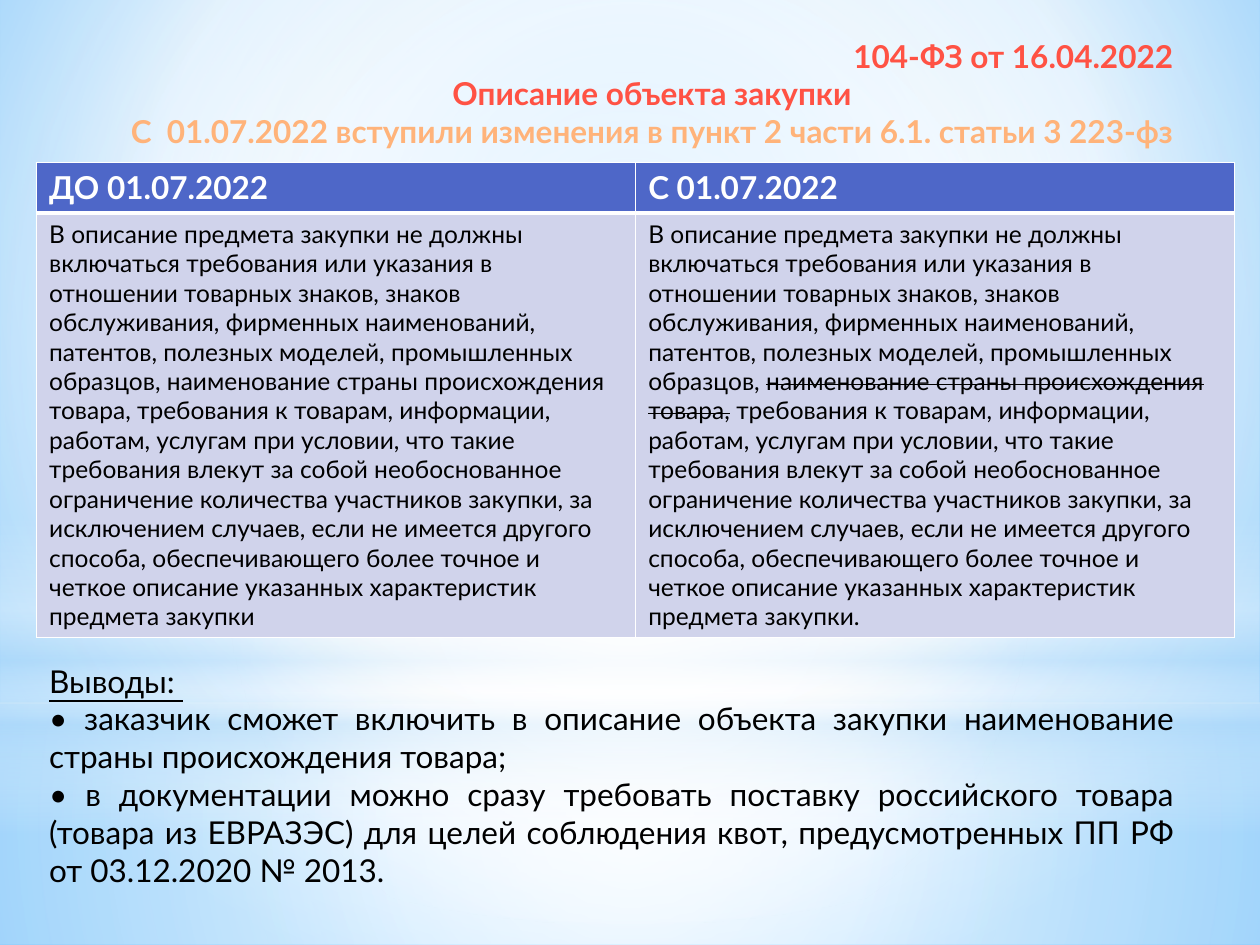
from dataclasses import dataclass

import pptx
import pptx.dml.color
import pptx.enum.shapes
import pptx.enum.text
import pptx.oxml
import pptx.oxml.ns
import pptx.util
from lxml import etree

Inches = pptx.util.Inches
Pt = pptx.util.Pt
qn = pptx.oxml.ns.qn
Align = pptx.enum.text.PP_ALIGN
Preset = pptx.enum.shapes.MSO_SHAPE

FONT = "Lato"
RED, ORANGE, BLACK, WHITE = "FF5244", "FFB37A", "000000", "FFFFFF"
HEADER_BLUE, CELL_LILAC, SKY = "4E67C8", "D0D3EB", "B4DCFA"


@dataclass
class Run:
    text: str
    color: str = BLACK
    size: int = 18
    bold: bool = False
    underline: bool = False
    strike: bool = False


@dataclass
class Line:
    run: Run
    align: Align
    margin: float = 0


@dataclass
class Gradient:
    """Stops are (position %, colour, opacity %); no focus means top to bottom."""
    stops: list[tuple[int, str, int]]
    focus: tuple[int, int, int, int] | None = (50, 50, 50, 50)


@dataclass
class Glow:
    preset: Preset
    top: float
    height: float
    gradient: Gradient


BACKDROP = Gradient([(0, "9ED5FF", 100), (60, WHITE, 100), (100, "5BB9FF", 100)],
                    (20, 10, 20, 60))
GLOWS = [
    Glow(Preset.RECTANGLE, 5.58, 1.92,
         Gradient([(0, WHITE, 91), (37, WHITE, 76), (100, SKY, 79)])),
    Glow(Preset.RECTANGLE, 0, 5.58,
         Gradient([(0, WHITE, 89), (48, WHITE, 62), (100, SKY, 79)])),
    Glow(Preset.RECTANGLE, 4.12, 2.5,
         Gradient([(0, WHITE, 0), (29, WHITE, 30), (45, SKY, 40),
                   (55, WHITE, 26), (65, SKY, 60), (100, WHITE, 0)], None)),
    Glow(Preset.OVAL, 1.75, 5.58, Gradient([(0, WHITE, 100), (56, WHITE, 0)])),
]

HEADING = [
    Line(Run("104-ФЗ от 16.04.2022", RED, bold=True), Align.RIGHT),
    Line(Run("Описание объекта закупки", RED, bold=True), Align.CENTER, margin=0.57),
    Line(Run("С  01.07.2022 вступили изменения в пункт 2 части 6.1. статьи 3 223-фз",
             ORANGE, bold=True), Align.RIGHT),
]
CONCLUSIONS = [
    Line(Run("Выводы: ", underline=True), Align.JUSTIFY),
    Line(Run("• заказчик сможет включить в описание объекта закупки наименование "
             "страны происхождения товара; "), Align.JUSTIFY),
    Line(Run("• в документации можно сразу требовать поставку российского товара "
             "(товара из ЕВРАЗЭС) для целей соблюдения квот, предусмотренных ПП РФ "
             "от 03.12.2020 № 2013."), Align.JUSTIFY),
]

RULE_START = (
    "В описание предмета закупки не должны включаться требования или указания в "
    "отношении товарных знаков, знаков обслуживания, фирменных наименований, "
    "патентов, полезных моделей, промышленных образцов, ")
ORIGIN_COUNTRY = "наименование страны происхождения товара,"
RULE_END = (
    " требования к товарам, информации, работам, услугам при условии, что такие "
    "требования влекут за собой необоснованное ограничение количества участников "
    "закупки, за исключением случаев, если не имеется другого способа, "
    "обеспечивающего более точное и четкое описание указанных характеристик "
    "предмета закупки")
COMPARISON = [
    [[Run("ДО 01.07.2022", WHITE, bold=True)],
     [Run("С 01.07.2022", WHITE, bold=True)]],
    [[Run(RULE_START + ORIGIN_COUNTRY + RULE_END, size=14)],
     [Run(RULE_START, size=14), Run(ORIGIN_COUNTRY, size=14, strike=True),
      Run(RULE_END + ".", size=14)]],
]
ROW_HEIGHTS = [0.39, 3.37]
ROW_FILLS = [HEADER_BLUE, CELL_LILAC]


def rgb(color: str) -> pptx.dml.color.RGBColor:
    return pptx.dml.color.RGBColor.from_string(color)


def apply_gradient(properties, gradient: Gradient) -> None:
    """Replace the solid fill among the properties with a gradient."""
    fill = etree.Element(qn("a:gradFill"), rotWithShape="1")
    stops = etree.SubElement(fill, qn("a:gsLst"))
    for position, color, opacity in gradient.stops:
        stop = etree.SubElement(stops, qn("a:gs"), pos=str(position * 1000))
        tint = etree.SubElement(stop, qn("a:srgbClr"), val=color)
        etree.SubElement(tint, qn("a:alpha"), val=str(opacity * 1000))
    if gradient.focus:
        circle = etree.SubElement(fill, qn("a:path"))
        circle.set("path", "circle")
        sides = {side: str(inset * 1000) for side, inset in zip("ltrb", gradient.focus)}
        etree.SubElement(circle, qn("a:fillToRect"), sides)
    else:
        etree.SubElement(fill, qn("a:lin"), ang="5400000", scaled="0")
    properties.replace(properties.find(qn("a:solidFill")), fill)


def draw_glow(slide, glow: Glow, depth: int) -> None:
    shape = slide.shapes.add_shape(
        glow.preset, 0, Inches(glow.top), Inches(10), Inches(glow.height))
    shape.shadow.inherit = False
    shape.line.fill.background()
    shape.fill.solid()
    apply_gradient(shape.element.spPr, glow.gradient)
    slide.shapes.element.insert(2 + depth, shape.element)


def add_run(paragraph, content: Run) -> None:
    run = paragraph.add_run()
    run.text = content.text
    run.font.name = FONT
    run.font.size = Pt(content.size)
    run.font.bold = content.bold
    run.font.underline = content.underline
    run.font.color.rgb = rgb(content.color)
    if content.strike:
        run.font._element.set("strike", "sngStrike")


def fill_placeholder(holder, lines: list[Line], left: float, top: float,
                     width: float, height: float) -> None:
    holder.left, holder.top = Inches(left), Inches(top)
    holder.width, holder.height = Inches(width), Inches(height)
    frame = holder.text_frame
    frame.auto_size = pptx.enum.text.MSO_AUTO_SIZE.NONE
    frame.vertical_anchor = pptx.enum.text.MSO_ANCHOR.TOP
    frame.word_wrap = True
    for index, line in enumerate(lines):
        paragraph = frame.add_paragraph() if index else frame.paragraphs[0]
        paragraph.alignment = line.align
        paragraph.space_before = Pt(0)
        properties = paragraph._p.get_or_add_pPr()
        properties.set("marL", str(Inches(line.margin)))
        properties.set("indent", "0")
        etree.SubElement(properties, qn("a:buNone"))
        add_run(paragraph, line.run)


def format_cell(cell, runs: list[Run], fill: str, bottom_width: int) -> None:
    properties = cell._tc.get_or_add_tcPr()
    for side, points in (("L", 1), ("R", 1), ("T", 1), ("B", bottom_width)):
        border = etree.SubElement(properties, qn(f"a:ln{side}"), w=str(Pt(points)))
        solid = etree.SubElement(border, qn("a:solidFill"))
        etree.SubElement(solid, qn("a:srgbClr"), val=WHITE)
    cell.fill.solid()
    cell.fill.fore_color.rgb = rgb(fill)
    for run in runs:
        add_run(cell.text_frame.paragraphs[0], run)


def draw_comparison(slide) -> None:
    table = slide.shapes.add_table(
        2, 2, Inches(0.29), Inches(1.29), Inches(9.51), Inches(sum(ROW_HEIGHTS))).table
    for row, contents in enumerate(COMPARISON):
        table.rows[row].height = Inches(ROW_HEIGHTS[row])
        for column, runs in enumerate(contents):
            format_cell(table.cell(row, column), runs, ROW_FILLS[row], 1 if row else 3)


def main() -> None:
    deck = pptx.Presentation()
    deck.slide_width, deck.slide_height = Inches(10), Inches(7.5)
    slide = deck.slides.add_slide(deck.slide_layouts[1])
    slide.background.fill.solid()
    apply_gradient(slide.element.find(".//" + qn("p:bgPr")), BACKDROP)
    for depth, glow in enumerate(GLOWS):
        draw_glow(slide, glow, depth)
    fill_placeholder(slide.shapes.title, HEADING, 0.37, 0.24, 9.04, 1.01)
    fill_placeholder(slide.placeholders[1], CONCLUSIONS, 0.29, 5.2, 9.13, 1.97)
    draw_comparison(slide)
    deck.save("out.pptx")


if __name__ == "__main__":
    main()
